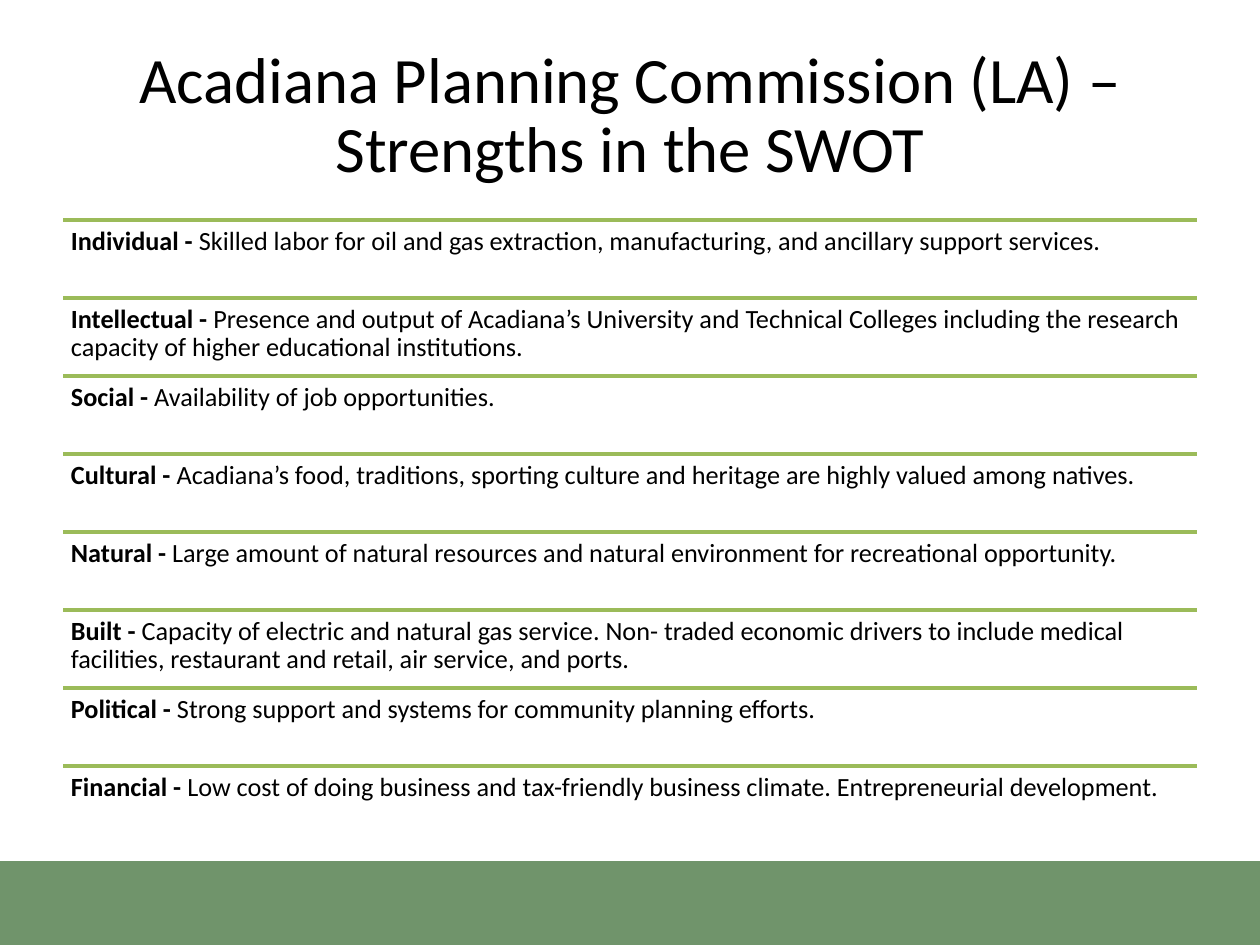
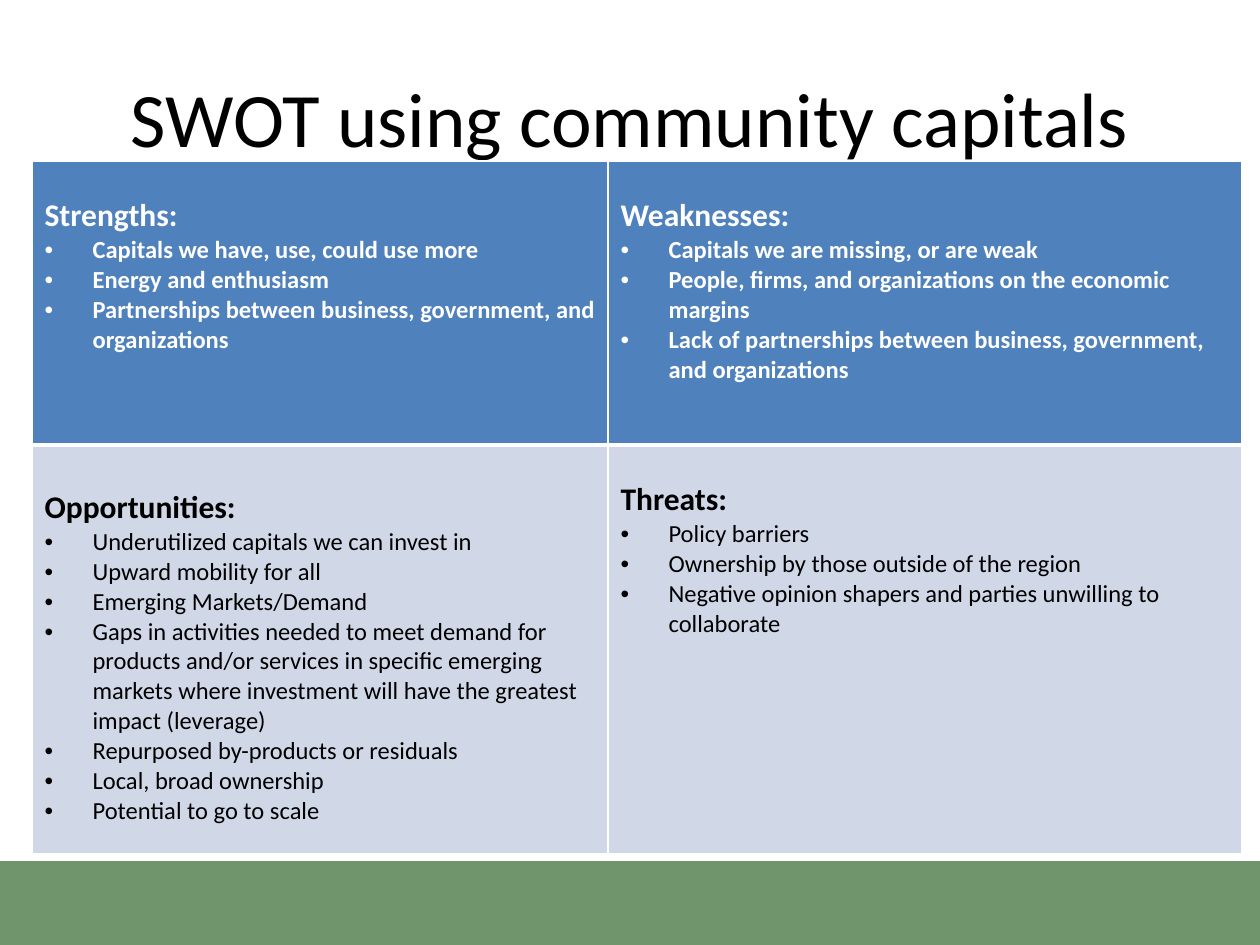
from lxml import etree
from pptx import Presentation
from pptx import util as u
from pptx.dml.color import RGBColor
from pptx.enum import shapes, text
from pptx.oxml import ns

# Shared look: 126 px to the inch
SCALE = 914400 / 126
WIDE, HIGH = 1260, 945
FACE = "Calibri"
HUES = {"band": "70946B", "rule": "9BBB59", "head": "4F81BD",
        "cell": "D0D8E8", "ink": "000000", "white": "FFFFFF"}
TITLE = (63, 38, 1134, 158)
BAND = 861

# Rows of the strengths list
LEFT, TOP, WIDTH, PITCH = 63, 220, 1134, 78
PAD = 8
STRENGTHS = [
    ("Individual", "Skilled labor for oil and gas extraction, manufacturing, "
                   "and ancillary support services."),
    ("Intellectual", "Presence and output of Acadiana’s University and Technical "
                     "Colleges including the research capacity of higher "
                     "educational institutions."),
    ("Social", "Availability of job opportunities."),
    ("Cultural", "Acadiana’s food, traditions, sporting culture and heritage "
                 "are highly valued among natives."),
    ("Natural", "Large amount of natural resources and natural environment "
                "for recreational opportunity."),
    ("Built", "Capacity of electric and natural gas service. Non- traded economic "
              "drivers to include medical facilities, restaurant and retail, "
              "air service, and ports."),
    ("Political", "Strong support and systems for community planning efforts."),
    ("Financial", "Low cost of doing business and tax-friendly business climate. "
                  "Entrepreneurial development."),
]

# SWOT grid: heading, top margin in px, points
COLS, ROWS = (576, 634), (284, 409)
INDENT = 48
SWOT = [
    [("Strengths:", 36, [
        "Capitals we have, use, could use more",
        "Energy and enthusiasm",
        "Partnerships between business, government, and organizations"]),
     ("Weaknesses:", 36, [
         "Capitals we are missing, or are weak",
         "People, firms, and organizations on the economic margins",
         "Lack of partnerships between business, government, and organizations"])],
    [("Opportunities:", 44, [
        "Underutilized capitals we can invest in",
        "Upward mobility for all",
        "Emerging Markets/Demand",
        "Gaps in activities needed to meet demand for products and/or services "
        "in specific emerging markets where investment will have the greatest "
        "impact (leverage)",
        "Repurposed by-products or residuals",
        "Local, broad ownership",
        "Potential to go to scale"]),
     ("Threats:", 36, [
         "Policy barriers",
         "Ownership by those outside of the region",
         "Negative opinion shapers and parties unwilling to collaborate"])],
]
# Per grid row: fill, ink, bold points, bottom border in points
STYLES = [("head", "white", True, 3), ("cell", "ink", False, 1)]


def px(*nums):
    return [u.Emu(round(n * SCALE)) for n in nums]


def hue(name):
    return RGBColor.from_string(HUES[name])


def put(item, **vals):
    for key, val in vals.items():
        setattr(item, key, val)


def write(para, words, size, ink="ink", bold=False):
    run = para.add_run()
    run.text = words
    put(run.font, name=FACE, size=u.Pt(size), bold=bold)
    run.font.color.rgb = hue(ink)


def add_band(slide):
    band = slide.shapes.add_shape(shapes.MSO_SHAPE.RECTANGLE,
                                  *px(0, BAND, WIDE, HIGH - BAND))
    band.shadow.inherit = False
    band.fill.solid()
    band.fill.fore_color.rgb = hue("band")
    band.line.fill.background()


def set_title(slide, words, size, space):
    title = slide.shapes.title
    put(title, **dict(zip(("left", "top", "width", "height"), px(*TITLE))))
    put(title.text_frame, word_wrap=True, auto_size=text.MSO_AUTO_SIZE.NONE,
        vertical_anchor=text.MSO_ANCHOR.MIDDLE)
    para = title.text_frame.paragraphs[0]
    put(para, alignment=text.PP_ALIGN.CENTER, line_spacing=space)
    write(para, words, size)


def add_page(deck, words, size, space=1.0):
    """Start a slide with the shared band and title."""
    plain = deck.slide_layouts.get_by_name("Title Only")
    slide = deck.slides.add_slide(plain)
    add_band(slide)
    set_title(slide, words, size, space)
    return slide


def add_rule(slide, y):
    x1, x2, y = px(LEFT, LEFT + WIDTH, y)
    rule = slide.shapes.add_connector(shapes.MSO_CONNECTOR.STRAIGHT, x1, y, x2, y)
    rule.line.color.rgb = hue("rule")
    rule.line.width = u.Pt(2)
    etree.SubElement(rule.element.spPr, ns.qn("a:effectLst"))


def add_row(slide, y, label, words):
    add_rule(slide, y)
    box = slide.shapes.add_textbox(*px(LEFT, y, WIDTH, PITCH))
    frame = box.text_frame
    sides = ("margin_left", "margin_top", "margin_right", "margin_bottom")
    put(frame, word_wrap=True, **dict.fromkeys(sides, px(PAD)[0]))
    para = frame.paragraphs[0]
    para.line_spacing = 0.9
    write(para, label + " - ", 15, bold=True)
    write(para, words, 15)


def add_dot(para):
    props = para._p.get_or_add_pPr()
    step = px(INDENT)[0]
    props.set("marL", str(step))
    props.set("indent", str(-step))
    etree.SubElement(props, ns.qn("a:buFont"), typeface="Arial")
    etree.SubElement(props, ns.qn("a:buChar"), char="•")


def add_edges(cell, **widths):
    """Draw white borders; they come before the fill in the cell."""
    props = cell._tc.get_or_add_tcPr()
    for spot, (side, width) in enumerate(widths.items()):
        edge = etree.Element(ns.qn("a:ln" + side), w=str(u.Pt(width)))
        fill = etree.SubElement(edge, ns.qn("a:solidFill"))
        etree.SubElement(fill, ns.qn("a:srgbClr"), val=HUES["white"])
        props.insert(spot, edge)


def fill_cell(cell, head, top, points, style, above):
    fill, ink, bold, below = style
    cell.fill.solid()
    cell.fill.fore_color.rgb = hue(fill)
    add_edges(cell, L=1, R=1, T=above, B=below)
    cell.margin_top = px(top)[0]
    frame = cell.text_frame
    write(frame.paragraphs[0], head, 18, ink, True)
    for point in points:
        para = frame.add_paragraph()
        add_dot(para)
        write(para, point, 14, ink, bold)


def add_grid(slide):
    frame = slide.shapes.add_table(len(ROWS), len(COLS),
                                   *px(32, 161, sum(COLS), sum(ROWS)))
    table = frame.table
    put(table, first_row=False, horz_banding=False)
    for col, width in zip(table.columns, px(*COLS)):
        col.width = width
    for row, height in zip(table.rows, px(*ROWS)):
        row.height = height
    above = 1
    for r, (cells, style) in enumerate(zip(SWOT, STYLES)):
        for c, (head, top, points) in enumerate(cells):
            fill_cell(table.cell(r, c), head, top, points, style, above)
        above = style[-1]


def main():
    deck = Presentation()
    deck.slide_width, deck.slide_height = px(WIDE, HIGH)

    # Strengths list
    slide = add_page(deck, "Acadiana Planning Commission (LA) – "
                           "Strengths in the SWOT", 37, 0.9)
    for i, (label, words) in enumerate(STRENGTHS):
        add_row(slide, TOP + i * PITCH, label, words)

    # SWOT grid
    slide = add_page(deck, "SWOT using community capitals", 44)
    add_grid(slide)

    deck.save("out.pptx")


if __name__ == "__main__":
    main()
